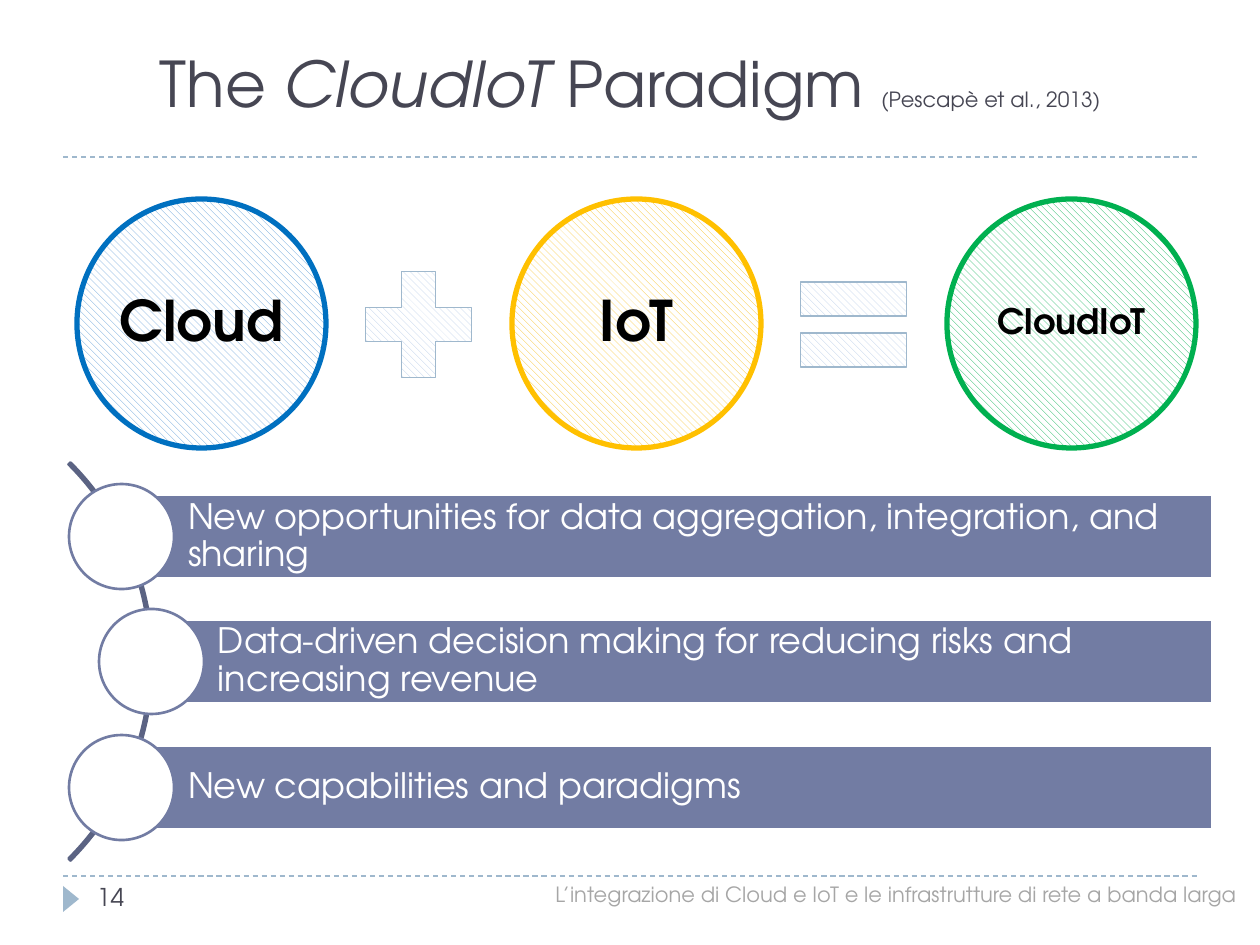
"""Build the slide that introduces the CloudIoT paradigm."""
from dataclasses import dataclass

from lxml import etree
from pptx import Presentation
from pptx.dml.color import RGBColor
from pptx.enum.dml import MSO_LINE, MSO_PATTERN
from pptx.enum.shapes import MSO_CONNECTOR, MSO_SHAPE
from pptx.enum.text import MSO_ANCHOR, PP_ALIGN
from pptx.oxml.ns import qn
from pptx.util import Pt

DASH = MSO_LINE.DASH
HATCH = MSO_PATTERN.WIDE_DOWNWARD_DIAGONAL
STRAIGHT = MSO_CONNECTOR.STRAIGHT
OVAL, RECTANGLE = MSO_SHAPE.OVAL, MSO_SHAPE.RECTANGLE
PLUS, EQUAL = MSO_SHAPE.MATH_PLUS, MSO_SHAPE.MATH_EQUAL
ARC, TRIANGLE = MSO_SHAPE.BLOCK_ARC, MSO_SHAPE.ISOSCELES_TRIANGLE
TOP, MIDDLE, BOTTOM = MSO_ANCHOR.TOP, MSO_ANCHOR.MIDDLE, MSO_ANCHOR.BOTTOM
LEFT, CENTER, RIGHT = PP_ALIGN.LEFT, PP_ALIGN.CENTER, PP_ALIGN.RIGHT

EMU_PER_PX = 914400 / 126


@dataclass(frozen=True)
class Theme:
    """Colours, font and type sizes of the slide."""
    font: str = "TeX Gyre Adventor"
    white: str = "FFFFFF"
    black: str = "000000"
    ink: str = "464653"
    muted: str = "A6A6A6"
    accent: str = "9FB8CD"
    symbol_hatch: str = "B5CBE7"
    bar: str = "727CA3"
    arc: str = "5B6383"
    cloud: tuple = ("0070C0", "5B9BD5")
    iot: tuple = ("FFC000", "F7C120")
    union: tuple = ("00B050", "00B050")
    title_size: int = 36
    term_size: int = 32
    body_size: int = 20
    number_size: int = 14
    small_size: int = 12


THEME = Theme()


def px(length):
    """Turn a length in px into EMU."""
    return round(length * EMU_PER_PX)


def rgb(code):
    """Turn a hex code into a colour."""
    return RGBColor.from_string(code)


def set_line(line, color, width):
    """Set the colour and the width in points of a line."""
    line.color.rgb = rgb(color)
    line.width = Pt(width)


def add_shape(slide, kind, frame, fill=None, line=None, hatch=None):
    """Add a preset shape with a plain, hatched or empty fill."""
    shape = slide.shapes.add_shape(kind, *map(px, frame))
    shape.shadow.inherit = False
    if hatch:
        shape.fill.patterned()
        shape.fill.pattern = HATCH
        shape.fill.fore_color.rgb = rgb(hatch)
        shape.fill.back_color.rgb = rgb(THEME.white)
    elif fill:
        shape.fill.solid()
        shape.fill.fore_color.rgb = rgb(fill)
    else:
        shape.fill.background()
    if line:
        set_line(shape.line, *line)
    else:
        shape.line.fill.background()
    return shape


def set_frame(shape, anchor, insets, wrap=True):
    """Set the anchor and insets of a text frame and return its first paragraph."""
    frame = shape.text_frame
    frame.word_wrap = wrap
    frame.vertical_anchor = anchor
    (frame.margin_left, frame.margin_top,
     frame.margin_right, frame.margin_bottom) = map(px, insets)
    return frame.paragraphs[0]


def add_span(para, text, size, color, bold=False, italic=False):
    """Add one run of text to a paragraph."""
    span = para.add_run()
    span.text = text
    span.font.name = THEME.font
    span.font.size = Pt(size)
    span.font.color.rgb = rgb(color)
    span.font.bold = bold
    span.font.italic = italic


def add_text(slide, frame, anchor=TOP, align=LEFT):
    """Add a text box and return its first paragraph."""
    box = slide.shapes.add_textbox(*map(px, frame))
    para = set_frame(box, anchor, (13, 6, 13, 6))
    para.alignment = align
    return para


def add_rule(slide, y):
    """Add a dashed rule across the slide."""
    rule = slide.shapes.add_connector(STRAIGHT, px(63), px(y), px(1197), px(y))
    set_line(rule.line, THEME.accent, 0.75)
    rule.line.dash_style = DASH
    properties = rule._element.find(qn("p:spPr"))
    etree.SubElement(properties, qn("a:effectLst"))


def add_title(slide):
    """Add the title with its citation."""
    para = add_text(slide, (147, -10, 979, 136), BOTTOM)
    add_span(para, "The ", THEME.title_size, THEME.ink)
    add_span(para, "CloudIoT ", THEME.title_size, THEME.ink, italic=True)
    add_span(para, "Paradigm ", THEME.title_size, THEME.ink)
    add_span(para, "(Pescapè et al., 2013)", THEME.small_size, THEME.ink)


def add_equation(slide):
    """Add the three circles and the symbols between them."""
    pitch = 435
    terms = (("Cloud", THEME.cloud, THEME.term_size),
             ("IoT", THEME.iot, THEME.term_size),
             ("CloudIoT", THEME.union, THEME.body_size))
    for index, (name, (edge, hatch), size) in enumerate(terms):
        circle = add_shape(slide, OVAL, (77 + index * pitch, 199, 249, 249),
                           line=(edge, 3), hatch=hatch)
        para = set_frame(circle, MIDDLE, (4, 4, 4, 4), wrap=False)
        para.alignment = CENTER
        para.line_spacing = 0.9
        add_span(para, name, size, THEME.black, bold=True)
    for index, kind in enumerate((PLUS, EQUAL)):
        add_shape(slide, kind, (346 + index * pitch, 252, 145, 145),
                  line=(THEME.accent, 0.75), hatch=THEME.symbol_hatch)


def add_benefit(slide, left, top, text):
    """Add a bar of text with a round marker at its left end."""
    height, right, marker = 83, 1212, 105
    bar = add_shape(slide, RECTANGLE, (left, top, right - left, height),
                    THEME.bar, (THEME.white, 1.5))
    para = set_frame(bar, MIDDLE, (67, 8, 8, 8))
    para.alignment = LEFT
    para.line_spacing = 0.9
    add_span(para, text, THEME.body_size, THEME.white)
    frame = (left - marker // 2, top - (marker - height) // 2, marker, marker)
    add_shape(slide, OVAL, frame, THEME.white, (THEME.bar, 1.5))


def add_benefits(slide):
    """Add the arc and the benefits along it."""
    arc = add_shape(slide, ARC, (-410, 380, 563, 563), line=(THEME.arc, 1.5))
    for index, value in enumerate((189, 27, 0.005)):
        arc.adjustments[index] = value
    benefits = (
        (121, "New opportunities for data aggregation, integration, and sharing"),
        (151, "Data-driven decision making for reducing risks and increasing revenue"),
        (121, "New capabilities and paradigms"))
    for index, (left, text) in enumerate(benefits):
        add_benefit(slide, left, 495 + index * 251 // 2, text)


def add_footer(slide):
    """Add the page marker, the page number and the footer text."""
    marker = add_shape(slide, TRIANGLE, (58, 891, 26, 16), THEME.accent)
    marker.rotation = 90
    number = add_text(slide, (84, 876, 273, 50))
    add_span(number, "14", THEME.number_size, THEME.ink)
    footer = add_text(slide, (452, 876, 798, 50), align=RIGHT)
    add_span(footer, "L’integrazione di Cloud e IoT e le infrastrutture di rete a banda larga",
             THEME.small_size, THEME.muted)


def main():
    """Build and save the deck."""
    deck = Presentation()
    deck.slide_width, deck.slide_height = px(1260), px(945)
    page = deck.slides.add_slide(deck.slide_layouts[6])
    for y in (876, 157):
        add_rule(page, y)
    add_title(page)
    add_equation(page)
    add_benefits(page)
    add_footer(page)
    deck.save("out.pptx")


if __name__ == "__main__":
    main()
